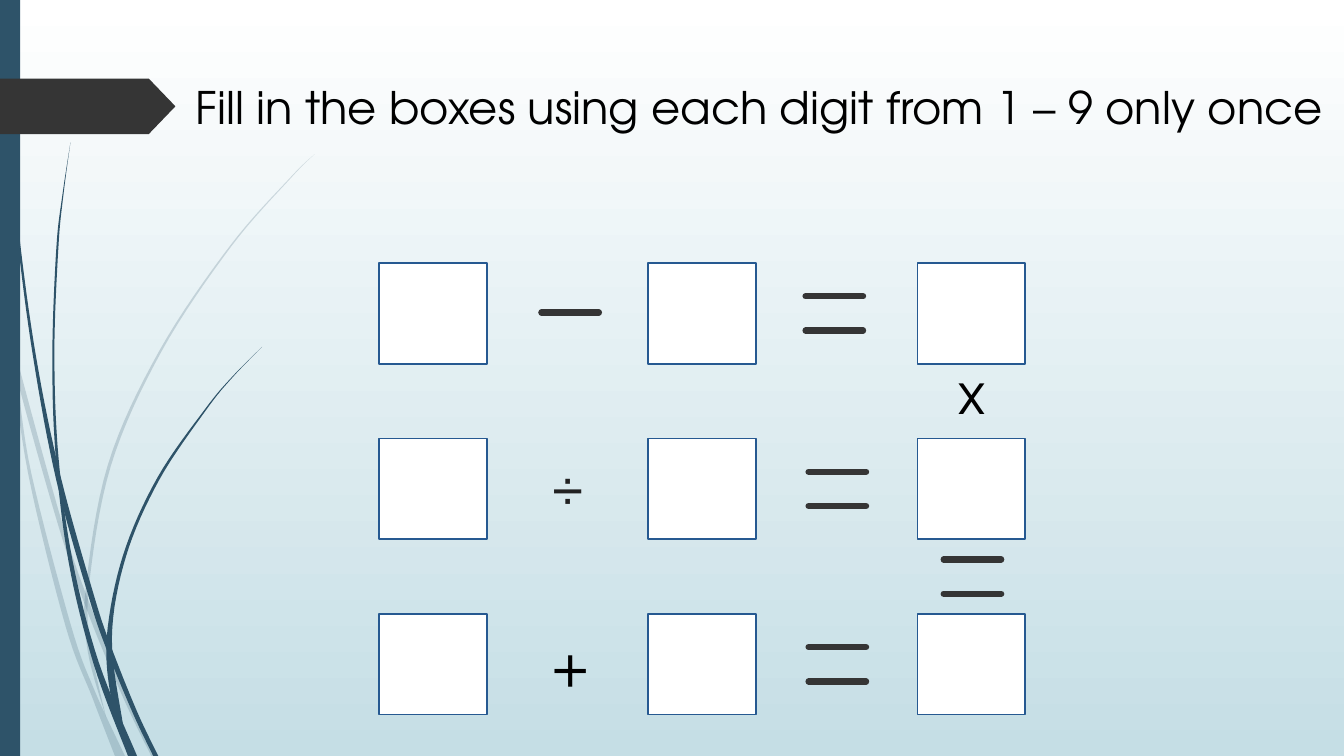
from lxml.etree import SubElement
from pptx import Presentation
from pptx.dml.color import RGBColor
from pptx.enum.shapes import MSO_CONNECTOR, MSO_SHAPE
from pptx.enum.text import MSO_AUTO_SIZE
from pptx.oxml.ns import qn
from pptx.util import Inches, Pt

WIDTH, HEIGHT = 13.33, 7.5
TEAL, CHARCOAL, WHITE, BLACK = "2E5369", "353535", "FFFFFF", "000000"
FONT = "TeX Gyre Adventor"
BOX_WIDTH, BOX_HEIGHT = 1.07, 1.0
COLUMN_STEP, ROW_STEP = 2.67, 1.74
BAR_LENGTH, BAR_GAP = 0.57, 0.34

FAINT_STRANDS = [
    ([(0, 2.82), (0.14, 3.45), (0.62, 5.2), (0.92, 6.07), (1.27, 6.92), (1.55, 7.5)],
     [(0, 2.99), (0.17, 3.76), (0.58, 5.22), (0.88, 6.1), (1.23, 6.94), (1.5, 7.5)]),
    ([(0.11, 3.5), (0.17, 3.76), (0.31, 4.69), (0.7, 6.19), (0.93, 6.83), (1.24, 7.5)],
     [(0.11, 3.5), (0.28, 4.7), (0.65, 6.21), (0.92, 6.93), (1.14, 7.5)]),
    ([(3.12, 1.53), (2.9, 1.75), (2.29, 2.45), (1.6, 3.49), (1.1, 4.62), (0.88, 5.84),
      (0.91, 6.46), (1.05, 7.11)],
     [(3.12, 1.53), (2.89, 1.75), (2.28, 2.44), (1.58, 3.48), (1.07, 4.61), (0.85, 5.84),
      (0.87, 6.46), (1.05, 7.11)]),
]
DARK_STRANDS = [
    ([(0.04, 0), (0.08, 1.09), (0.19, 2.32), (0.36, 3.55), (0.6, 4.72), (0.93, 5.9),
      (1.1, 6.41), (1.36, 7.06), (1.57, 7.5)],
     [(0.03, 0), (0.07, 1.1), (0.17, 2.33), (0.33, 3.55), (0.56, 4.77), (0.88, 5.92),
      (1.06, 6.45), (1.32, 7.08), (1.52, 7.5)]),
    ([(0.7, 1.41), (0.63, 1.93), (0.58, 2.45), (0.54, 3.49), (0.58, 4.53), (0.72, 5.56),
      (0.98, 6.57), (1.36, 7.5)],
     [(0.7, 1.41), (0.62, 1.93), (0.56, 2.45), (0.52, 3.49), (0.55, 4.49), (0.68, 5.57),
      (0.93, 6.59), (1.27, 7.5)]),
    ([(2.6, 3.44), (2.31, 3.74), (2.05, 4.06), (1.58, 4.76), (1.25, 5.52), (1.11, 6.33),
      (1.22, 7.19)],
     [(2.6, 3.44), (2.31, 3.73), (2.04, 4.05), (1.56, 4.74), (1.22, 5.51), (1.06, 6.31),
      (1.1, 6.91), (1.22, 7.19)]),
]


def color(code):
    """Turn a hex string into a colour."""
    return RGBColor.from_string(code)


def paint(shape, fill, line=None):
    """Give a shape a flat fill and an optional outline."""
    shape.shadow.inherit = False
    shape.fill.solid()
    shape.fill.fore_color.rgb = color(fill)
    if line:
        shape.line.color.rgb = color(line)
        shape.line.width = Pt(1.25)
    else:
        shape.line.fill.background()


def add_block(slide, kind, box, fill, line=None):
    """Add a painted preset shape in a box."""
    shape = slide.shapes.add_shape(kind, *map(Inches, box))
    paint(shape, fill, line)
    return shape


def add_label(slide, box, text, size, font=FONT, ink=BLACK):
    """Add one unwrapped line of text in a box."""
    frame = slide.shapes.add_textbox(*map(Inches, box)).text_frame
    frame.word_wrap = False
    frame.auto_size = MSO_AUTO_SIZE.SHAPE_TO_FIT_TEXT
    paragraph = frame.paragraphs[0]
    paragraph.text = text
    paragraph.font.name = font
    paragraph.font.size = Pt(size)
    paragraph.font.color.rgb = color(ink)


def add_bar(slide, left, top):
    """Add a thick horizontal stroke with round ends."""
    bar = slide.shapes.add_connector(
        MSO_CONNECTOR.STRAIGHT, Inches(left), Inches(top), Inches(left + BAR_LENGTH), Inches(top))
    bar.line.color.rgb = color(CHARCOAL)
    bar.line.width = Pt(4.5)
    bar.line._get_or_add_ln().set("cap", "rnd")
    SubElement(bar._element.spPr, qn("a:effectLst"))


def add_equals(slide, left, top):
    """Add an equals sign made of two bars."""
    for row in range(2):
        add_bar(slide, left, top + row * BAR_GAP)


def smooth(points, steps=8):
    """Return a dense smooth curve through the points."""
    padded = [points[0], *points, points[-1]]
    curve = []
    for a, b, c, d in zip(padded, padded[1:], padded[2:], padded[3:]):
        for t in (step / steps for step in range(steps)):
            curve.append(tuple(
                q + 0.5 * t * (r - p + t * (2 * p - 5 * q + 4 * r - s + t * (3 * (q - r) + s - p)))
                for p, q, r, s in zip(a, b, c, d)))
    return curve + [points[-1]]


def add_strand(slide, left, top, edges, opacity):
    """Add a tapered blade between two smooth edges."""
    right_edge, left_edge = map(smooth, edges)
    outline = [(Inches(left + x), Inches(top + y)) for x, y in right_edge + left_edge[::-1]]
    builder = slide.shapes.build_freeform(*outline[0])
    builder.add_line_segments(outline[1:], close=True)
    strand = builder.convert_to_shape()
    paint(strand, TEAL)
    if opacity < 100:
        solid = strand._element.spPr.find(qn("a:solidFill"))
        SubElement(solid[0], qn("a:alpha"), val=str(opacity * 1000))


def add_backdrop(slide, left, top, height):
    """Add the gradient, the grass blades and the side band."""
    fill = slide.background.fill
    fill.gradient()
    fill.gradient_angle = 270
    for stop, code in zip(fill.gradient_stops, (WHITE, "C5DEE5")):
        stop.color.rgb = color(code)
    for strands, opacity in ((FAINT_STRANDS, 20), (DARK_STRANDS, 100)):
        for edges in strands:
            add_strand(slide, left, top, edges, opacity)
    add_block(slide, MSO_SHAPE.RECTANGLE, (left, top, 0.2, height), TEAL)


def add_heading(slide, left, top):
    """Add the pointed tag and the instruction beside it."""
    tag = add_block(slide, MSO_SHAPE.PENTAGON, (left, top, 1.74, 0.55), CHARCOAL)
    tag.adjustments[0] = 0.48
    add_label(slide, (left + 1.84, top - 0.04, 11.77, 0.64),
              "Fill in the boxes using each digit from 1 – 9 only once", 32)


def add_puzzle(slide, left, top):
    """Add the three by three board with its operators."""
    for row in range(3):
        row_top = top + row * ROW_STEP
        for column in range(3):
            add_block(slide, MSO_SHAPE.RECTANGLE,
                      (left + column * COLUMN_STEP, row_top, BOX_WIDTH, BOX_HEIGHT),
                      WHITE, "265991")
        add_equals(slide, left + (4.26 if row else 4.23), row_top + 0.33)
    add_bar(slide, left + 1.61, top + 0.49)
    add_equals(slide, left + 5.6, top + 2.94)
    add_label(slide, (left + 5.65, top + 0.9, 0.47, 0.77), "x", 40)
    add_label(slide, (left + 1.6, top + 3.59, 0.54, 0.77), "+", 40)
    add_label(slide, (left + 1.62, top + 1.85, 0.51, 0.77), "÷", 40, "Arial", "222222")


def main():
    """Build the puzzle slide and save it."""
    presentation = Presentation()
    presentation.slide_width = Inches(WIDTH)
    presentation.slide_height = Inches(HEIGHT)
    slide = presentation.slides.add_slide(presentation.slide_layouts[6])
    add_backdrop(slide, 0, 0, HEIGHT)
    add_heading(slide, 0, 0.78)
    add_puzzle(slide, 3.76, 2.61)
    presentation.save("out.pptx")


if __name__ == "__main__":
    main()
